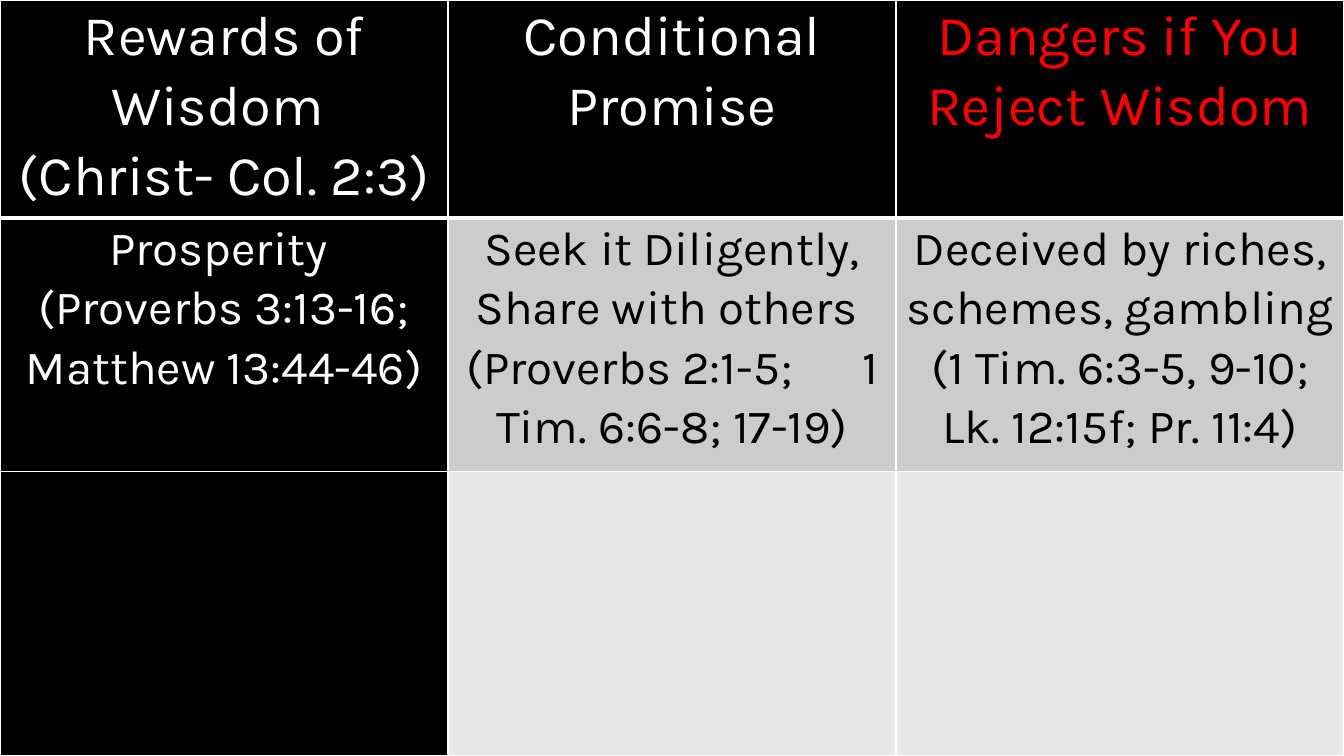
import pptx
import pptx.dml.color
import pptx.enum.text
import pptx.oxml.ns
import pptx.util
from lxml import etree
from pptx.util import Inches

COLORS = {
    "black": "000000",
    "white": "FFFFFF",
    "red": "FF0000",
    "gray": "CCCCCC",
    "light": "E7E7E7",
}
FONT = "Karla"
COLUMN_COUNT = 3
SLIDE_SIZE = (13.33, 7.5)
WIDE_GAP = "41.5"
ROWS = [
    {"height": 2.16, "size": 40, "cells": [
        (["Rewards of Wisdom ", "(Christ- Col. 2:3)"], "white", "black"),
        (["Conditional Promise"], "white", "black"),
        (["Dangers if You Reject Wisdom"], "red", "black"),
    ]},
    {"height": 2.52, "size": 34, "cells": [
        (["Prosperity ", "(Proverbs 3:13-16; Matthew 13:44-46)"], "white", "black"),
        (["Seek it Diligently, Share with others ",
          "(Proverbs 2:1-5;| |1 Tim. 6:6-8; 17-19)"], "black", "gray"),
        (["Deceived by riches, schemes, gambling ",
          "(1 Tim. 6:3-5, 9-10; Lk. 12:15f; Pr. 11:4)"], "black", "gray"),
    ]},
    {"height": 2.82, "size": 34, "cells": [
        ([], "white", "black"),
        ([], "black", "light"),
        ([], "black", "light"),
    ]},
]


def rgb(name):
    """Return the named colour."""
    return pptx.dml.color.RGBColor.from_string(COLORS[name])


def set_borders(cell, widths):
    """Draw white cell borders with the given widths in points."""
    properties = cell._tc.get_or_add_tcPr()
    for side, width in widths.items():
        line = etree.SubElement(properties, pptx.oxml.ns.qn(f"a:ln{side}"),
                                w=str(pptx.util.Pt(width)))
        fill = etree.SubElement(line, pptx.oxml.ns.qn("a:solidFill"))
        etree.SubElement(fill, pptx.oxml.ns.qn("a:srgbClr"), val=COLORS["white"])


def add_line(paragraph, text, size, color):
    """Fill a centred paragraph, widening a space marked off by bars."""
    paragraph.alignment = pptx.enum.text.PP_ALIGN.CENTER
    paragraph.line_spacing = 1.07
    for part in text.split("|"):
        run = paragraph.add_run()
        run.text = part
        font_format = {"name": FONT, "size": pptx.util.Pt(size)}
        for attribute, value in font_format.items():
            setattr(run.font, attribute, value)
        run.font.color.rgb = rgb(color)
        if part == " ":
            run.font._element.set("spc", str(int(float(WIDE_GAP) * 100)))


def fill_cell(cell, lines, size, color, background):
    """Format one table cell and write its lines."""
    cell_format = {"margin_left": Inches(0.07), "margin_right": Inches(0.07),
                   "margin_top": 0, "margin_bottom": 0}
    for attribute, value in cell_format.items():
        setattr(cell, attribute, value)
    cell.fill.solid()
    cell.fill.fore_color.rgb = rgb(background)
    for index, text in enumerate(lines):
        frame = cell.text_frame
        paragraph = frame.paragraphs[0] if index == 0 else frame.add_paragraph()
        add_line(paragraph, text, size, color)


def add_wisdom_table(slide):
    """Add the full-slide table of rewards, promises and dangers."""
    width, height = SLIDE_SIZE
    table = slide.shapes.add_table(len(ROWS), COLUMN_COUNT, 0, 0,
                                   Inches(width), Inches(height)).table
    for column in table.columns:
        column.width = Inches(width / COLUMN_COUNT)
    for row_index, row in enumerate(ROWS):
        table.rows[row_index].height = Inches(row["height"])
        widths = {"L": 1, "R": 1, "T": 3 if row_index == 1 else 1,
                  "B": 3 if row_index == 0 else 1}
        for column_index, (lines, color, background) in enumerate(row["cells"]):
            cell = table.cell(row_index, column_index)
            set_borders(cell, widths)
            fill_cell(cell, lines, row["size"], color, background)


def main():
    """Build and save the slide."""
    presentation = pptx.Presentation()
    presentation.slide_width, presentation.slide_height = map(Inches, SLIDE_SIZE)
    slide = presentation.slides.add_slide(presentation.slide_layouts[6])
    slide.background.fill.solid()
    slide.background.fill.fore_color.rgb = rgb("black")
    add_wisdom_table(slide)
    presentation.save("out.pptx")


if __name__ == "__main__":
    main()
